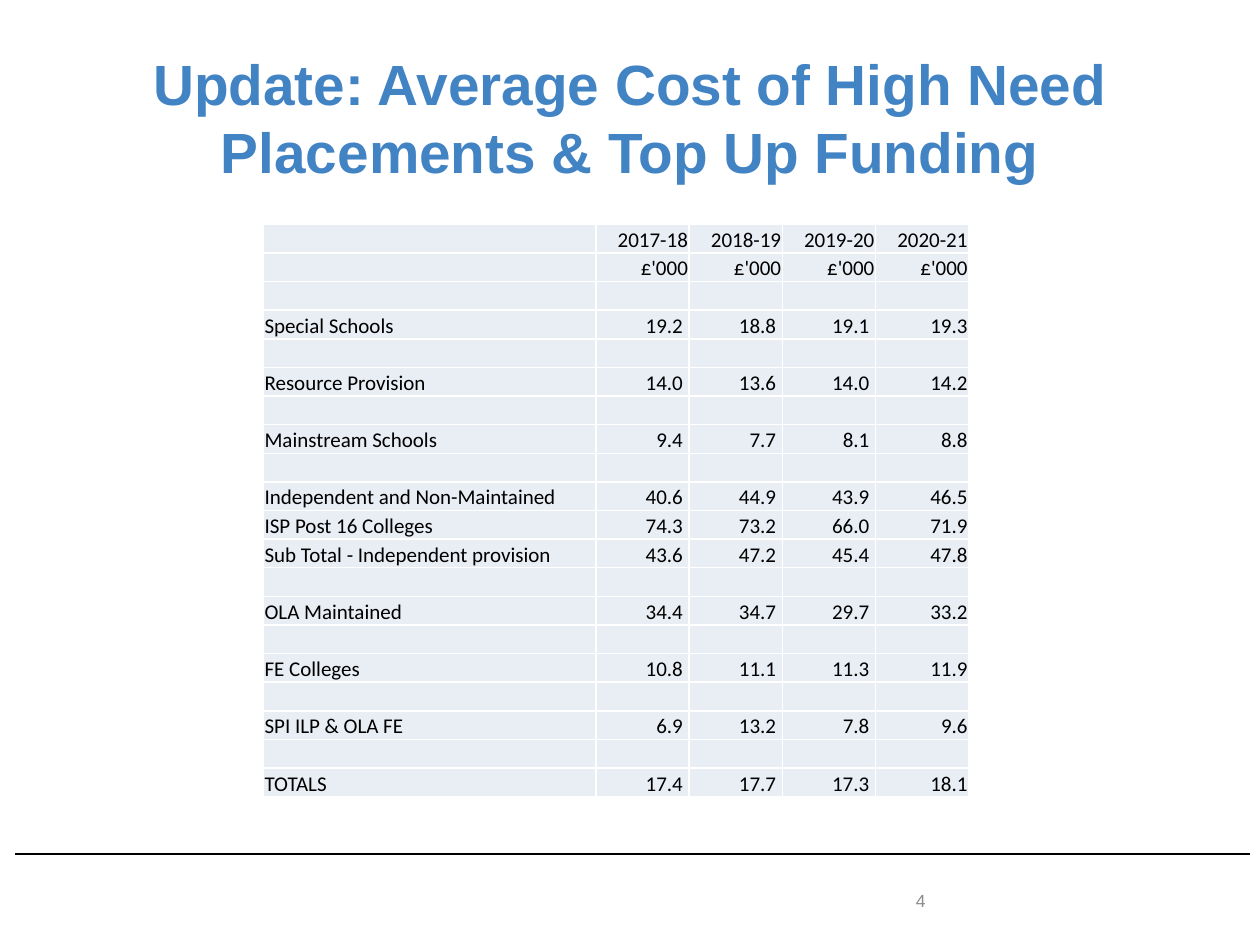
from pptx import Presentation
from pptx.dml.color import RGBColor
from pptx.enum.shapes import MSO_CONNECTOR
from pptx.enum.text import MSO_ANCHOR, PP_ALIGN
from pptx.oxml.ns import qn
from pptx.util import Inches, Pt
from lxml import etree

BLUE = RGBColor(0x42, 0x83, 0xC4)
PALE = RGBColor(0xE9, 0xED, 0xF4)
GREY = RGBColor(0x8C, 0x8C, 0x8C)
BLACK = RGBColor(0, 0, 0)
LEFT, CENTER, RIGHT = PP_ALIGN.LEFT, PP_ALIGN.CENTER, PP_ALIGN.RIGHT
MIDDLE, BOTTOM = MSO_ANCHOR.MIDDLE, MSO_ANCHOR.BOTTOM
STRAIGHT = MSO_CONNECTOR.STRAIGHT

BLANK = [""] * 5
ROWS = [
    ["", "2017-18", "2018-19", "2019-20", "2020-21"],
    [""] + ["£'000"] * 4,
    BLANK,
    ["Special Schools", "19.2", "18.8", "19.1", "19.3"],
    BLANK,
    ["Resource Provision", "14.0", "13.6", "14.0", "14.2"],
    BLANK,
    ["Mainstream Schools", "9.4", "7.7", "8.1", "8.8"],
    BLANK,
    ["Independent and Non-Maintained", "40.6", "44.9", "43.9", "46.5"],
    ["ISP Post 16 Colleges", "74.3", "73.2", "66.0", "71.9"],
    ["Sub Total - Independent provision", "43.6", "47.2", "45.4", "47.8"],
    BLANK,
    ["OLA Maintained", "34.4", "34.7", "29.7", "33.2"],
    BLANK,
    ["FE Colleges", "10.8", "11.1", "11.3", "11.9"],
    BLANK,
    ["SPI ILP & OLA FE", "6.9", "13.2", "7.8", "9.6"],
    BLANK,
    ["TOTALS", "17.4", "17.7", "17.3", "18.1"],
]
HEADS = 2
WIDTHS = [2.64] + [0.74] * 4


class Page:
    head, body = "Arial", "Calibri"

    def __init__(self, deck):
        self.slide = deck.slides.add_slide(deck.slide_layouts[5])

    def style(self, para, name, size, color, align=LEFT, bold=False):
        para.alignment = align
        font = para.font
        font.name, font.size, font.bold = name, Pt(size), bold
        font.color.rgb = color

    def title(self, text, x, y, w, h):
        shape = self.slide.shapes.title
        shape.left, shape.top = Inches(x), Inches(y)
        shape.width, shape.height = Inches(w), Inches(h)
        frame = shape.text_frame
        frame.text, frame.word_wrap = text, True
        frame.vertical_anchor = MIDDLE
        self.style(frame.paragraphs[0], self.head, 32.4, BLUE, CENTER, True)

    def text(self, text, x, y, w, h):
        box = self.slide.shapes.add_textbox(Inches(x), Inches(y), Inches(w), Inches(h))
        frame = box.text_frame
        frame.text, frame.word_wrap = text, True
        frame.vertical_anchor = MIDDLE
        self.style(frame.paragraphs[0], self.head, 10, GREY)

    def rule(self, x, y, end):
        line = self.slide.shapes.add_connector(
            STRAIGHT, Inches(x), Inches(y), Inches(end), Inches(y))
        line.line.color.rgb, line.line.width = BLACK, Pt(1)
        etree.SubElement(line._element.spPr, qn("a:effectLst"))

    def cell(self, cell, text, align, inset):
        cell.fill.solid()
        cell.fill.fore_color.rgb = PALE
        cell.vertical_anchor = BOTTOM
        cell.margin_left = cell.margin_top = Inches(0.01)
        cell.margin_right, cell.margin_bottom = Inches(inset), 0
        cell.text = text
        para = cell.text_frame.paragraphs[0]
        self.style(para, self.body, 12, BLACK, align)
        if not text:
            # An empty cell takes its line height from the end mark
            etree.SubElement(para._p, qn("a:endParaRPr"), sz="1200")

    def table(self, rows, widths, x, y, h):
        table = self.slide.shapes.add_table(
            len(rows), len(widths), Inches(x), Inches(y),
            Inches(sum(widths)), Inches(h)).table
        table.first_row = table.horz_banding = False
        for col, width in zip(table.columns, widths):
            col.width = Inches(width)
        last = len(widths) - 1
        for r, row in enumerate(rows):
            for c, text in enumerate(row):
                # Figures before the last year stand a little off the edge
                inset = 0.05 if r >= HEADS and 0 < c < last else 0.01
                self.cell(table.cell(r, c), text, RIGHT if c else LEFT, inset)


def main():
    deck = Presentation()
    deck.slide_width, deck.slide_height = Inches(10), Inches(7.5)
    page = Page(deck)

    # Footer rule and heading
    page.rule(0.12, 6.78, 9.92)
    page.title("Update: Average Cost of High Need Placements & Top Up Funding",
               0.5, 0.3, 9, 1.25)

    # Page number
    page.text("4", 7.17, 6.95, 2.33, 0.4)

    # Cost table
    page.table(ROWS, WIDTHS, 2.09, 1.78, 4.55)

    deck.save("out.pptx")


if __name__ == "__main__":
    main()
